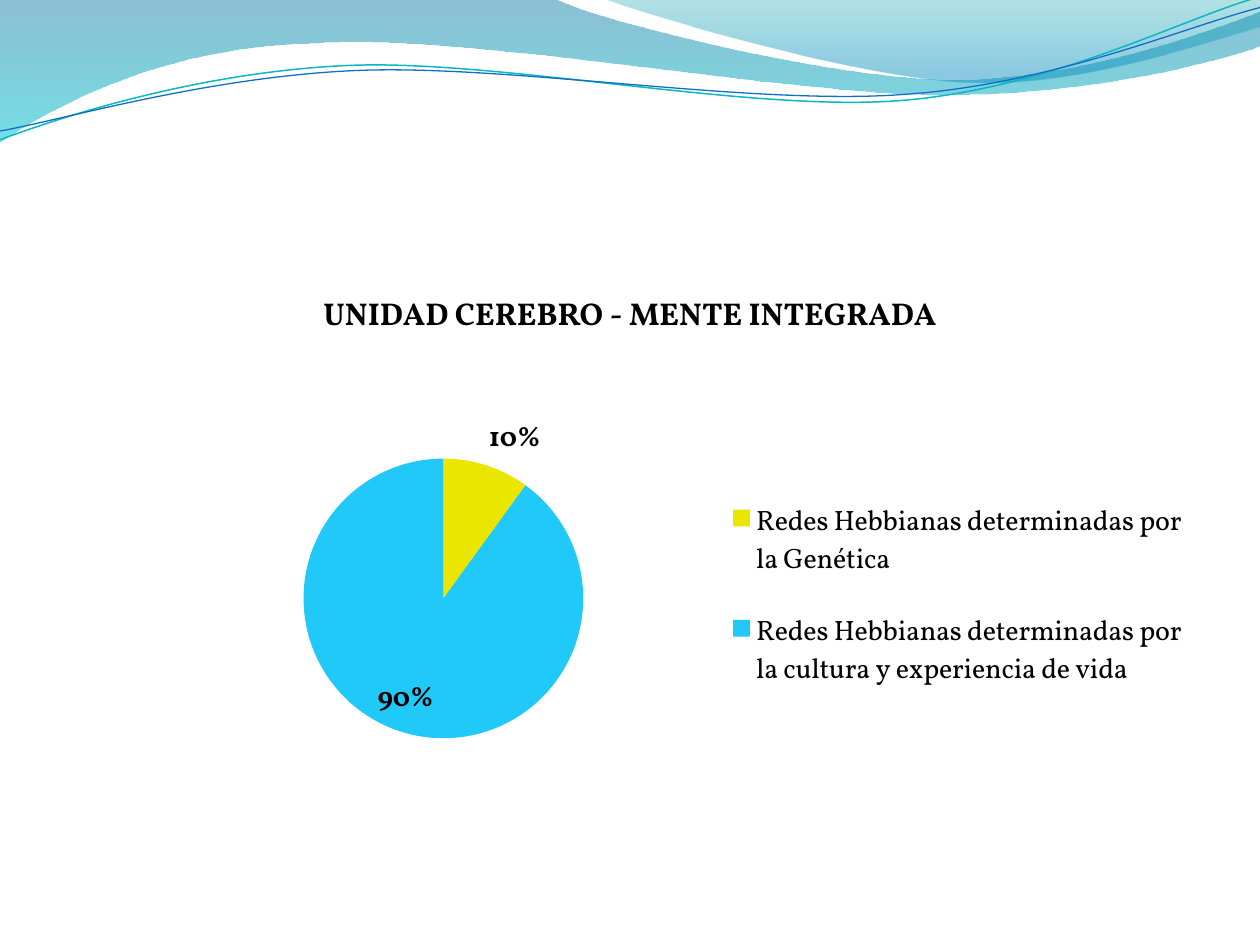
from dataclasses import dataclass

from lxml.etree import SubElement
from pptx import Presentation
from pptx.chart.data import CategoryChartData
from pptx.dml.color import RGBColor
from pptx.enum.chart import XL_CHART_TYPE, XL_LABEL_POSITION, XL_LEGEND_POSITION
from pptx.oxml import parse_xml
from pptx.oxml.ns import nsdecls, qn
from pptx.util import Pt

PX = 9144  # EMU in one px, 100 px to the inch


@dataclass(frozen=True)
class Theme:
    font: str = "Vollkorn"
    text: str = "000000"
    genetics: str = "EBE600"
    culture: str = "20C9F8"
    teal_line: str = "0AB8BF"
    blue_line: str = "0F6FC6"
    # Gradient stops: position, colour and opacity in percent
    wide_wave: tuple = ((0, "0074A1", 45), (100, "00C6CF", 55))
    right_wave: tuple = ((0, "00A1A9", 30), (80, "008BBF", 45))
    title_size: int = 18
    body_size: int = 16
    base_size: int = 10


class SlideBuilder:
    def __init__(self, slide, theme):
        self.slide = slide
        self.theme = theme

    def freeform(self, start, segments, close):
        """Draw segments: one point is a line, three points are a Bezier curve."""
        points = [(x * PX, y * PX) for segment in segments for x, y in segment]
        builder = self.slide.shapes.build_freeform(start[0] * PX, start[1] * PX, scale=1.0)
        builder.add_line_segments(points, close=close)
        shape = builder.convert_to_shape()
        shape.shadow.inherit = False

        # Gather the three points of each curve in one cubic segment
        lines = iter(list(shape._element.spPr.iter(qn("a:lnTo"))))
        for segment in segments:
            members = [next(lines) for point in segment]
            if len(members) == 3:
                curve = parse_xml(f'<a:cubicBezTo {nsdecls("a")}/>')
                members[0].addprevious(curve)
                for member in members:
                    curve.append(member[0])
                    member.getparent().remove(member)
        return shape

    def wave(self, stops, start, *segments):
        shape = self.freeform(start, segments, close=True)
        shape.line.fill.background()
        shape.fill.gradient()
        shape.fill.gradient_angle = 270
        for stop, (position, color, opacity) in zip(shape.fill.gradient_stops, stops):
            stop.position = position / 100
            stop.color.rgb = RGBColor.from_string(color)
        colors = shape._element.spPr.iter(qn("a:srgbClr"))
        for color_element, (position, color, opacity) in zip(colors, stops):
            SubElement(color_element, qn("a:alpha"), val=str(opacity * 1000))

    def curved_line(self, color, width, start, *segments):
        shape = self.freeform(start, segments, close=False)
        shape.fill.background()
        shape.line.color.rgb = RGBColor.from_string(color)
        shape.line.width = Pt(width)

    def style_font(self, font, size, bold=False):
        font.name = self.theme.font
        font.size = Pt(size)
        font.bold = bold
        font.color.rgb = RGBColor.from_string(self.theme.text)

    def pie(self, box, title, shares, plot_box, legend_box):
        data = CategoryChartData()
        data.categories = [name for name, value, color in shares]
        data.add_series(title, [value for name, value, color in shares])
        frame = self.slide.shapes.add_chart(
            XL_CHART_TYPE.PIE, *(length * PX for length in box), data
        )
        chart = frame.chart
        self.style_font(chart.font, self.theme.base_size)

        # Title and legend
        chart.has_title = True
        chart.chart_title.include_in_layout = False
        text_frame = chart.chart_title.text_frame
        text_frame.text = title
        self.style_font(text_frame.paragraphs[0].runs[0].font, self.theme.title_size, bold=True)
        chart.has_legend = True
        chart.legend.position = XL_LEGEND_POSITION.RIGHT
        chart.legend.include_in_layout = False
        self.style_font(chart.legend.font, self.theme.body_size)

        # Slices and percentages
        plot = chart.plots[0]
        plot.vary_by_categories = True
        for index, (name, value, color) in enumerate(shares):
            fill = plot.series[0].points[index].format.fill
            fill.solid()
            fill.fore_color.rgb = RGBColor.from_string(color)
        labels = plot.series[0].data_labels
        labels.show_percentage = True
        labels.show_value = False
        labels.number_format = "0%"
        labels.number_format_is_linked = False
        labels.position = XL_LABEL_POSITION.BEST_FIT
        self.style_font(labels.font, self.theme.body_size, bold=True)

        # Places inside the chart
        self.place(chart, "c:plotArea", 0, box, plot_box, '<c:layoutTarget val="inner"/>')
        self.place(chart, "c:legend", 1, box, legend_box)

    def place(self, chart, tag, index, chart_box, part_box, target=""):
        width, height = chart_box[2:]
        values = "".join(
            f'<c:{name} val="{length / whole:.4f}"/>'
            for name, length, whole in zip("xywh", part_box, (width, height) * 2)
        )
        part = chart._chartSpace.find(".//" + qn(tag))
        for layout in part.findall(qn("c:layout")):
            part.remove(layout)
        part.insert(index, parse_xml(
            f'<c:layout {nsdecls("c")}><c:manualLayout>{target}'
            f'<c:xMode val="edge"/><c:yMode val="edge"/>{values}'
            "</c:manualLayout></c:layout>"
        ))


def main():
    theme = Theme()
    presentation = Presentation()
    presentation.slide_width = 1000 * PX
    presentation.slide_height = 750 * PX
    slide = presentation.slides.add_slide(presentation.slide_layouts[6])
    builder = SlideBuilder(slide, theme)

    # Waves along the top
    builder.wave(
        theme.wide_wave,
        (-1, 0), [(440, -1)],
        [(476, 17), (664, 63), (758, 63)],
        [(853, 63), (958, 26), (1000, 9)],
        [(1001, 36)],
        [(983, 44), (870, 76), (746, 75)],
        [(622, 75), (382, 28), (257, 34)],
        [(129, 36), (46, 83), (-1, 113)],
    )
    builder.wave(
        theme.right_wave,
        (479, -1),
        [(509, 11), (682, 62), (769, 65)],
        [(856, 69), (961, 32), (1000, 21)],
        [(1000, 0)],
    )

    # Thin lines over the waves
    builder.curved_line(
        theme.teal_line, 0.85,
        (0, 111),
        [(48, 93), (158, 57), (277, 52)],
        [(395, 47), (593, 89), (713, 80)],
        [(833, 71), (938, 15), (998, -2)],
    )
    builder.curved_line(
        theme.blue_line, 0.75,
        (0, 104),
        [(47, 96), (164, 61), (283, 56)],
        [(403, 51), (597, 84), (717, 75)],
        [(836, 67), (941, 21), (1000, 6)],
    )

    # Pie chart
    builder.pie(
        (50, 212, 900, 480),
        "UNIDAD CEREBRO - MENTE INTEGRADA",
        [
            ("Redes Hebbianas determinadas por la Genética", 10, theme.genetics),
            ("Redes Hebbianas determinadas por la cultura y experiencia de vida", 90,
             theme.culture),
        ],
        plot_box=(66, 152, 472, 222),
        legend_box=(525, 161, 370, 202),
    )
    presentation.save("out.pptx")


if __name__ == "__main__":
    main()
